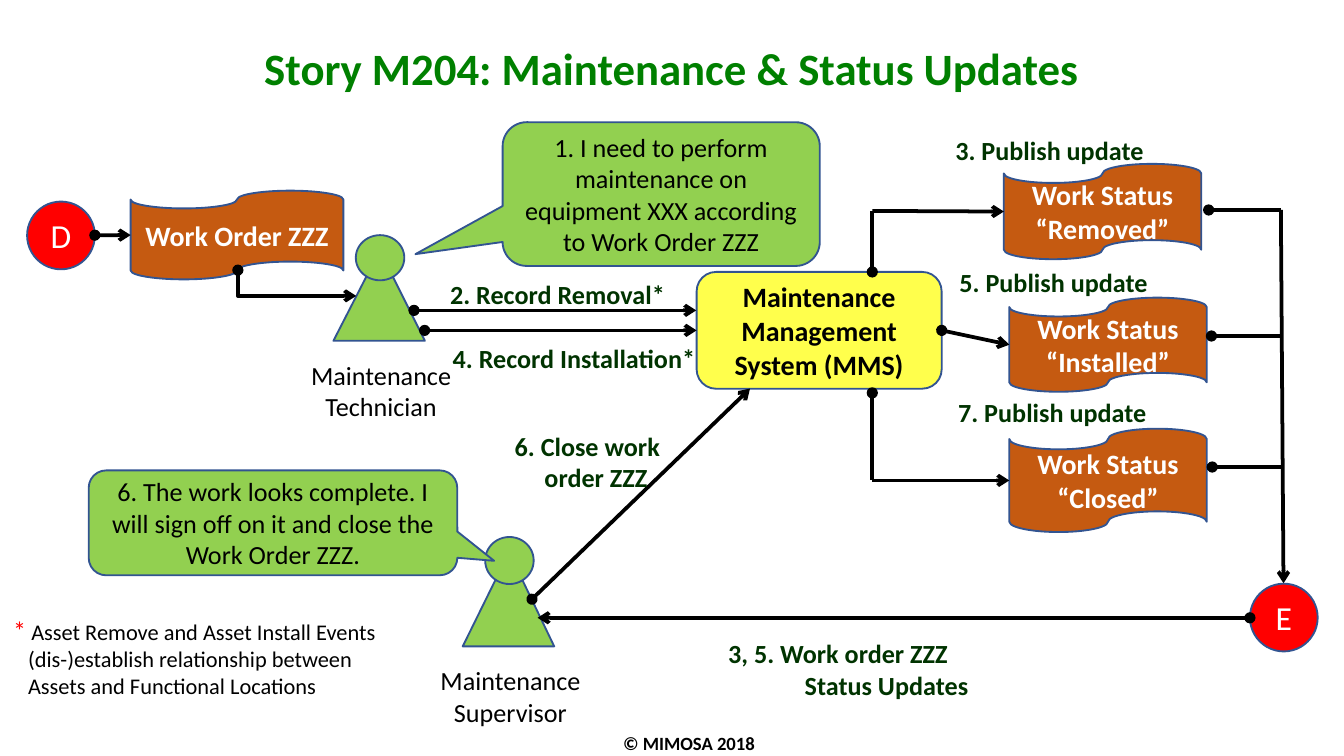
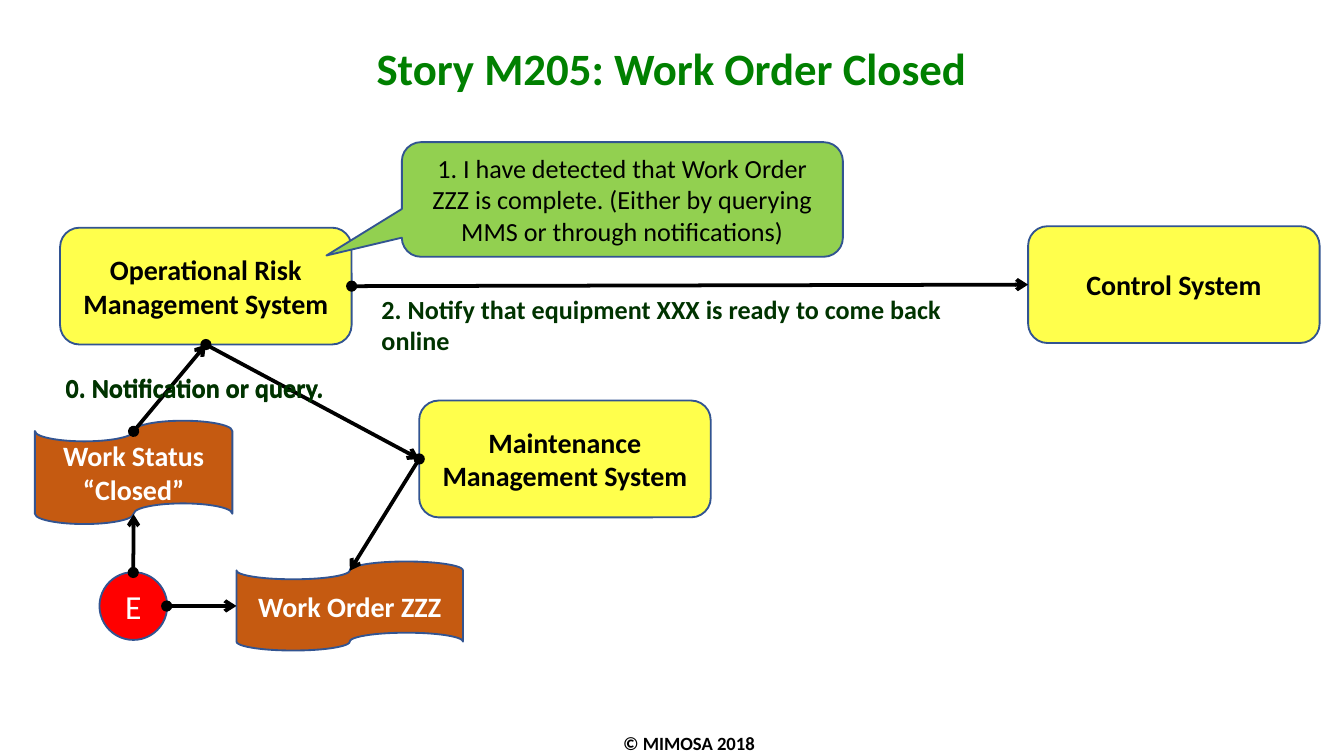
from lxml import etree
from pptx import Presentation
from pptx.dml.color import RGBColor
from pptx.enum.shapes import MSO_CONNECTOR, MSO_SHAPE
from pptx.enum.text import MSO_ANCHOR, PP_ALIGN
from pptx.oxml.ns import qn
from pptx.util import Pt

FONT = "Calibri"
BLACK = RGBColor(0x00, 0x00, 0x00)
WHITE = RGBColor(0xFF, 0xFF, 0xFF)
RED = RGBColor(0xFF, 0x00, 0x00)
YELLOW = RGBColor(0xFF, 0xFF, 0x00)
LIGHT_GREEN = RGBColor(0x92, 0xD0, 0x50)
TITLE_GREEN = RGBColor(0x00, 0x80, 0x00)
LABEL_GREEN = RGBColor(0x00, 0x33, 0x00)
BROWN = RGBColor(0xC5, 0x5A, 0x11)
OUTLINE_BLUE = RGBColor(0x32, 0x54, 0x91)

ELLIPSE = MSO_SHAPE.OVAL
TRIANGLE = MSO_SHAPE.ISOSCELES_TRIANGLE
TAPE = MSO_SHAPE.FLOWCHART_PUNCHED_TAPE
CALLOUT = MSO_SHAPE.ROUNDED_RECTANGULAR_CALLOUT
ROUNDED = MSO_SHAPE.ROUNDED_RECTANGLE
STRAIGHT = MSO_CONNECTOR.STRAIGHT
ELBOW = MSO_CONNECTOR.ELBOW
LEFT, CENTER = PP_ALIGN.LEFT, PP_ALIGN.CENTER
TOP, MIDDLE = MSO_ANCHOR.TOP, MSO_ANCHOR.MIDDLE
LEFT_SIDE, BOTTOM_SIDE, RIGHT_SIDE = 1, 2, 3


def add_run(paragraph, text, size, color, bold=False):
    run = paragraph.add_run()
    run.text = text
    run.font.name = FONT
    run.font.size = Pt(size)
    run.font.bold = bold
    run.font.color.rgb = color
    return run


def write_text(shape, text, size=14, color=BLACK, bold=False, align=CENTER,
               anchor=MIDDLE, wrap=True, indent=0, spacing=None):
    frame = shape.text_frame
    frame.word_wrap = wrap
    frame.vertical_anchor = anchor
    for index, line in enumerate(text.split("\n")):
        paragraph = frame.add_paragraph() if index else frame.paragraphs[0]
        if index and indent:
            paragraph._p.get_or_add_pPr().set("marL", str(Pt(indent)))
        paragraph.alignment = align
        if spacing:
            paragraph.line_spacing = spacing
        add_run(paragraph, line, size, color, bold)
    return frame


def add_text(shapes, box, text, **style):
    textbox = shapes.add_textbox(*map(Pt, box))
    return write_text(textbox, text, anchor=TOP, **style)


def add_label(slide, box, text, wrap=False, indent=0):
    return add_text(slide.shapes, box, text, color=LABEL_GREEN, bold=True,
                    align=LEFT, wrap=wrap, indent=indent)


def add_figure(shapes, kind, box, fill, adjustments=()):
    shape = shapes.add_shape(kind, *map(Pt, box))
    shape.shadow.inherit = False
    shape.fill.solid()
    shape.fill.fore_color.rgb = fill
    shape.line.color.rgb = OUTLINE_BLUE
    shape.line.width = Pt(1)
    for index, value in enumerate(adjustments):
        shape.adjustments[index] = value
    return shape


def add_event(slide, x, y, letter):
    circle = add_figure(slide.shapes, ELLIPSE, (x, y, 36.3, 36.3), RED)
    write_text(circle, letter, size=18, color=WHITE)
    return circle


def add_tape(slide, box, text):
    tape = add_figure(slide.shapes, TAPE, box, BROWN)
    write_text(tape, text, size=15, color=WHITE, bold=True)
    return tape


def add_system(slide, x, y, text, width=156.2):
    system = add_figure(slide.shapes, ROUNDED, (x, y, width, 62.6), YELLOW)
    color = system._element.spPr.find(".//" + qn("a:srgbClr"))
    etree.SubElement(color, qn("a:alpha"), val="70000")
    write_text(system, text, size=15, bold=True)
    return system


def add_callout(slide, box, text, tip_x, tip_y):
    callout = add_figure(slide.shapes, CALLOUT, box, LIGHT_GREEN,
                         (tip_x, tip_y, 0.167))
    write_text(callout, text)


def add_person(slide, x, y, height, role):
    shapes = slide.shapes.add_group_shape().shapes
    add_figure(shapes, TRIANGLE, (x, y, 49, height), LIGHT_GREEN, (0.507,))
    add_figure(shapes, ELLIPSE, (x + 12, y - 8.2, 26, height / 2), LIGHT_GREEN)
    add_text(shapes, (x - 20.5, y + height + 6.2, 92.2, 41.2), role)


def style_connector(connector, oval, arrow):
    connector.line.color.rgb = BLACK
    connector.line.width = Pt(2)
    properties = connector._element.spPr
    line = properties.find(qn("a:ln"))
    if oval:
        etree.SubElement(line, qn("a:headEnd"), type="oval")
    if arrow:
        etree.SubElement(line, qn("a:tailEnd"), type="arrow")
    etree.SubElement(properties, qn("a:effectLst"))


def connect(slide, start, end, oval=True, arrow=True):
    joins = [not isinstance(point[0], (int, float)) for point in (start, end)]
    points = [(0, 0) if joined else point
              for joined, point in zip(joins, (start, end))]
    connector = slide.shapes.add_connector(
        STRAIGHT, *(Pt(value) for point in points for value in point))
    if joins[0]:
        connector.begin_connect(*start)
    if joins[1]:
        connector.end_connect(*end)
    style_connector(connector, oval, arrow)


def connect_down_then_right(slide, start, end):
    width, height = end[1] - start[1], end[0] - start[0]
    center_x, center_y = (start[0] + end[0]) / 2, (start[1] + end[1]) / 2
    connector = slide.shapes.add_connector(
        ELBOW, Pt(center_x + width / 2), Pt(center_y - height / 2),
        Pt(center_x - width / 2), Pt(center_y + height / 2))
    connector.rotation = 270
    connector._element.spPr.find(qn("a:prstGeom")).set("prst", "bentConnector2")
    style_connector(connector, True, True)


def add_halo(frame):
    properties = frame.paragraphs[0].runs[0]._r.get_or_add_rPr()
    line = etree.Element(qn("a:ln"), w=str(Pt(3)))
    fill = etree.SubElement(line, qn("a:solidFill"))
    etree.SubElement(fill, qn("a:srgbClr"), val=str(WHITE))
    properties.insert(0, line)


def add_story_slide(presentation, title):
    slide = presentation.slides.add_slide(presentation.slide_layouts[6])
    add_text(slide.shapes, (300, 388.8, 138.2, 19.4), "© MIMOSA 2018",
             size=10, bold=True)
    add_text(slide.shapes, (16.6, 21.6, 686.2, 42.5), title, size=24,
             color=TITLE_GREEN, bold=True, spacing=0.9)
    return slide


def build_maintenance(presentation):
    slide = add_story_slide(presentation,
                            "Story M204: Maintenance & Status Updates")
    add_person(slide, 178.6, 134.2, 48.4, "Maintenance Technician")
    add_callout(slide, (269.3, 65.5, 169.9, 77), "1. I need to perform "
                "maintenance on equipment XXX according to Work Order ZZZ",
                -0.775, 0.418)
    add_event(slide, 14.5, 108, "D")
    order = add_tape(slide, (70, 102.2, 114, 47.5), "Work Order ZZZ")
    connect(slide, (50.8, 126), (order, LEFT_SIDE))
    connect_down_then_right(slide, (127.4, 144.7), (190.8, 158.5))

    mms = add_system(slide, 373.2, 145.7,
                     "Maintenance Management System (MMS)", width=131.3)
    connect(slide, (221.8, 166.3), (373, 166.3))
    connect(slide, (227.5, 177), (mms, LEFT_SIDE))
    add_label(slide, (234, 145.4, 130.3, 24.2), "2. Record Removal*")
    add_label(slide, (235.4, 180, 145.4, 24.2), "4. Record Installation*")

    statuses = []
    for step, label_x, label_y, x, y, height, status in (
            (3, 504.7, 68.4, 537.8, 87.8, 51.1, "Removed"),
            (5, 506.9, 139, 540.7, 159.5, 50.4, "Installed"),
            (7, 506.2, 208.8, 540.7, 229.7, 55.4, "Closed")):
        add_label(slide, (label_x, label_y, 116, 24.2),
                  f"{step}. Publish update")
        statuses.append(add_tape(slide, (x, y, 105.8, height),
                                 f"Work Status\n“{status}”"))
    removed, installed, closed = statuses
    connect(slide, (mms, RIGHT_SIDE), (installed, LEFT_SIDE))
    for edge_y, turn_y, status in ((145.7, 113, removed),
                                   (210.5, 257.4, closed)):
        connect(slide, (467.3, edge_y), (467.3, turn_y), arrow=False)
        connect(slide, (467.3, turn_y), (status, LEFT_SIDE), oval=False)

    for x, y in ((647.5, 112.5), (649, 180), (649.4, 250.2)):
        connect(slide, (x, y), (686.5, y), arrow=False)
    connect(slide, (686.2, 112.5), (687.6, 312.5), oval=False)
    add_event(slide, 669.6, 312.7, "E")

    add_person(slide, 247.9, 295.9, 50.4, "Maintenance Supervisor")
    add_callout(slide, (47.5, 252, 197.5, 56.2), "6. The work looks complete. "
                "I will sign off on it and close the Work Order ZZZ.",
                0.6, 0.362)
    connect(slide, (285, 321), (401.8, 208.2))
    add_label(slide, (268.6, 226.8, 114.5, 41), "6. Close work\norder ZZZ",
              wrap=True, indent=16)
    connect(slide, (669.6, 331), (288, 331))
    add_label(slide, (383, 338.2, 167, 41), "3, 5. Work order ZZZ\n"
              "Status Updates", wrap=True, indent=41)

    note = add_text(slide.shapes, (0, 325.4, 216, 53.3), "*", color=RED,
                    align=LEFT)
    paragraph = note.paragraphs[0]
    properties = paragraph._p.get_or_add_pPr()
    properties.set("marL", str(Pt(8)))
    properties.set("indent", str(Pt(-8)))
    add_run(paragraph, " Asset Remove and Asset Install Events "
            "(dis-)establish relationship between Assets and Functional "
            "Locations", 12, BLACK)


def build_order_closed(presentation):
    slide = add_story_slide(presentation, "Story M205: Work Order Closed")
    add_event(slide, 53.3, 306.5, "E")
    order = add_tape(slide, (126.7, 300.8, 121.3, 47.7), "Work Order ZZZ")
    connect(slide, (89.3, 324.7), (order, LEFT_SIDE))

    risk = add_system(slide, 32.2, 122, "Operational Risk Management System")
    mms = add_system(slide, 224.6, 214.6, "Maintenance Management System")
    connect(slide, (risk, BOTTOM_SIDE), (mms, LEFT_SIDE))
    connect(slide, (mms, LEFT_SIDE), (187.4, 305.8))
    add_callout(slide, (215.3, 76.2, 236.3, 61.4), "1. I have detected that "
                "Work Order ZZZ is complete. (Either by querying MMS or "
                "through notifications)", -0.671, 0.489)
    control = add_system(slide, 550.8, 121.2, "Control System")
    connect(slide, (risk, RIGHT_SIDE), (control, LEFT_SIDE))
    add_label(slide, (197.3, 153.4, 335, 41), "2. Notify that equipment XXX "
              "is ready to come back online", wrap=True)

    add_tape(slide, (18.7, 225.4, 105.8, 55.4), "Work Status\n“Closed”")
    connect(slide, (71.4, 306.7), (71.6, 275.5))
    connect(slide, (71.6, 231.1), (risk, BOTTOM_SIDE))
    query = "0. Notification or query."
    add_halo(add_label(slide, (28.1, 195.5, 167, 24.2), query, wrap=True))
    add_label(slide, (28.1, 195.8, 154.1, 24.2), query)


def main():
    presentation = Presentation()
    presentation.slide_width = Pt(720)
    presentation.slide_height = Pt(405)
    build_maintenance(presentation)
    build_order_closed(presentation)
    presentation.save("out.pptx")


if __name__ == "__main__":
    main()
